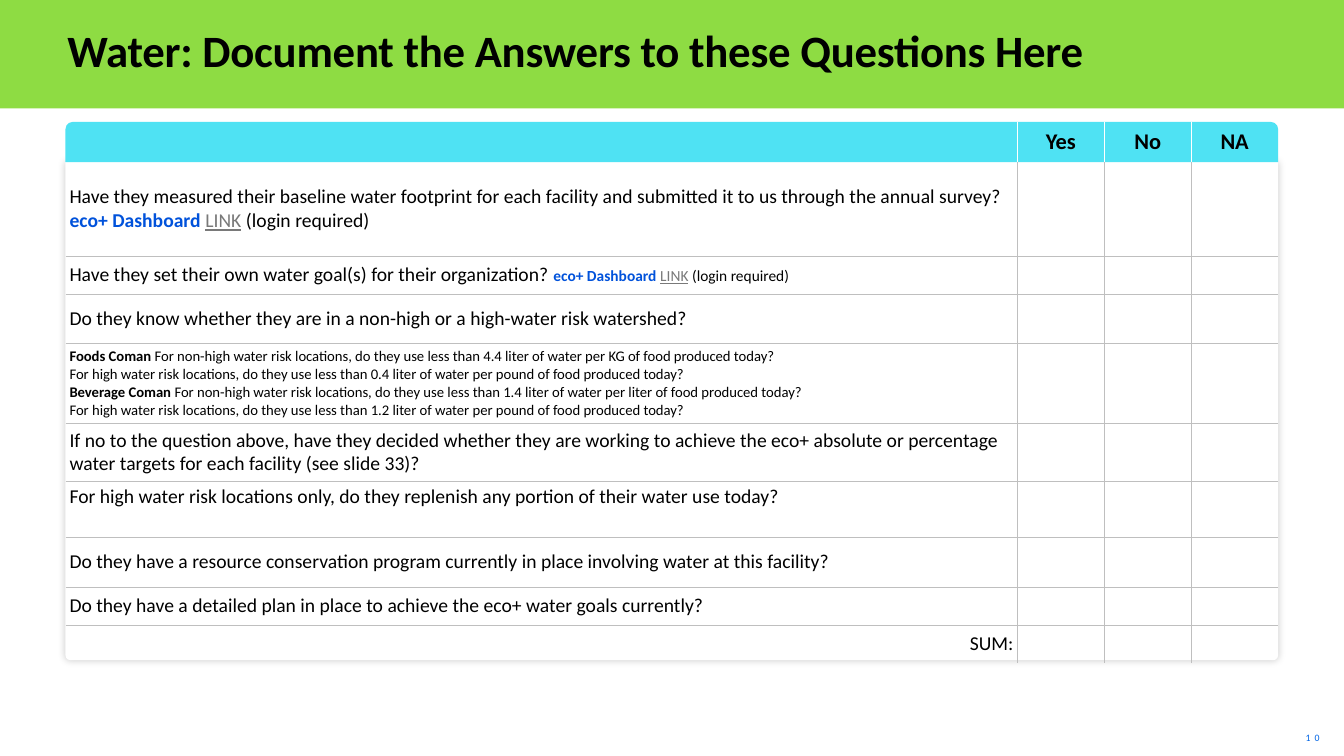
"""Build the water questionnaire slide with its yes, no and NA answer table."""
from dataclasses import dataclass

from lxml.etree import SubElement
from pptx import Presentation
from pptx.dml.color import RGBColor
from pptx.enum.shapes import MSO_SHAPE
from pptx.enum.text import MSO_ANCHOR, PP_ALIGN
from pptx.oxml.ns import qn
from pptx.util import Pt

FONT = "Calibri"
BLACK, WHITE, GREY, BLUE = "000000", "FFFFFF", "BFBFBF", "0052DB"
NO_STYLE = "{2D5ABB26-0587-4C30-8999-92F81FD0307C}"
LEFT, TOP, WIDTH, HEADER, CARD = 46.8, 87.1, 866.2, 28.8, 355.7
INSET = 2.88
ANSWERS = ("Yes", "No", "NA")
COLUMNS = (680, 62.07, 62.07, 62.07)


@dataclass
class Run:
    text: str
    size: float = 14
    color: str = BLACK
    bold: bool = False
    underline: bool = False
    spacing: int = 0


@dataclass
class Row:
    height: float
    lines: list[list[Run]]
    align: PP_ALIGN = PP_ALIGN.LEFT
    anchor: MSO_ANCHOR = MSO_ANCHOR.MIDDLE


@dataclass
class Panel:
    preset: MSO_SHAPE
    box: tuple[float, float, float, float]
    color: str
    corners: tuple[float, ...] = ()
    shadow: bool = False


def rgb(color: str) -> RGBColor:
    return RGBColor.from_string(color)


def dashboard(size: float) -> list[Run]:
    return [Run("eco+ Dashboard ", size, BLUE, bold=True),
            Run("LINK", size, "797979", underline=True),
            Run(" (login required)", size)]


def question(text: str) -> list[list[Run]]:
    return [[Run(text)]]


PANELS = [
    Panel(MSO_SHAPE.RECTANGLE, (0, 0, 960, 77.5), "8EDC43"),
    Panel(MSO_SHAPE.ROUND_2_SAME_RECTANGLE, (LEFT, TOP + HEADER, WIDTH, CARD),
          WHITE, (0, 0.01), True),
    Panel(MSO_SHAPE.ROUND_2_SAME_RECTANGLE, (LEFT, TOP, WIDTH, HEADER),
          "4FE2F3", (0.18, 0)),
]

ROWS = [
    Row(67.5, [[Run("Have they measured their baseline water footprint for each facility "
                    "and submitted it to us through the annual survey?")],
               dashboard(14)]),
    Row(27, [[Run("Have they set their own water goal(s) for their organization? "),
              *dashboard(11)]]),
    Row(35.5, question("Do they know whether they are in a non-high or a high-water risk "
                       "watershed?")),
    Row(57, [
        [Run("Foods Coman ", 10.5, bold=True),
         Run("For non-high water risk locations, do they use less than 4.4 liter of water "
             "per KG of food produced today?", 10.5)],
        [Run("For high water risk locations, do they use less than 0.4 liter of water "
             "per pound of food produced today?", 10.5)],
        [Run("Beverage Coman ", 10.5, bold=True),
         Run("For non-high water risk locations, do they use less than 1.4 liter of water "
             "per liter of food produced today?", 10.5)],
        [Run("For high water risk locations, do they use less than 1.2 liter of water "
             "per pound of food produced today?", 10.5)],
    ]),
    Row(41, question("If no to the question above, have they decided whether they are working "
                     "to achieve the eco+ absolute or percentage water targets for each "
                     "facility (see slide 33)?")),
    Row(40, question("For high water risk locations only, do they replenish any portion of "
                     "their water use today?"), anchor=MSO_ANCHOR.TOP),
    Row(36, question("Do they have a resource conservation program currently in place "
                     "involving water at this facility?")),
    Row(27, question("Do they have a detailed plan in place to achieve the eco+ water goals "
                     "currently?")),
    Row(27, question("SUM:"), PP_ALIGN.RIGHT),
]


def write(tf, lines: list[list[Run]], align: PP_ALIGN) -> None:
    for i, line in enumerate(lines):
        p = tf.add_paragraph() if i else tf.paragraphs[0]
        p.alignment = align
        for run in line:
            r = p.add_run()
            r.text = run.text
            formats = {"name": FONT, "size": Pt(run.size), "bold": run.bold,
                       "underline": run.underline}
            for name, value in formats.items():
                setattr(r.font, name, value)
            r.font.color.rgb = rgb(run.color)
            if run.spacing:
                r.font._element.set("spc", str(run.spacing))


def draw_panel(slide, panel: Panel) -> None:
    s = slide.shapes.add_shape(panel.preset, *map(Pt, panel.box))
    s.shadow.inherit = False
    s.fill.solid()
    s.fill.fore_color.rgb = rgb(panel.color)
    s.line.fill.background()
    for i, corner in enumerate(panel.corners):
        s.adjustments[i] = corner
    if panel.shadow:
        effects = s._element.spPr.find(qn("a:effectLst"))
        outer = SubElement(effects, qn("a:outerShdw"), blurRad=str(Pt(5)), dist="0",
                           algn="ctr", rotWithShape="0")
        color = SubElement(outer, qn("a:srgbClr"), val=BLACK)
        SubElement(color, qn("a:alpha"), val="20000")


def fill_cell(cell, row: Row, borders: dict[str, str]) -> None:
    tcPr = cell._tc.get_or_add_tcPr()
    for side in ("lnL", "lnR", "lnT", "lnB"):
        if side in borders:
            ln = SubElement(tcPr, qn(f"a:{side}"), w=str(Pt(0.5)))
            SubElement(SubElement(ln, qn("a:solidFill")), qn("a:srgbClr"), val=borders[side])
    cell.fill.background()
    cell.vertical_anchor = row.anchor
    for side in ("left", "right", "top", "bottom"):
        setattr(cell, f"margin_{side}", Pt(INSET))
    if row.lines:
        write(cell.text_frame, row.lines, row.align)
    else:
        SubElement(cell.text_frame.paragraphs[0]._p, qn("a:endParaRPr"), sz="1400")


def draw_table(slide) -> None:
    heights = [28.5] + [row.height for row in ROWS]
    frame = slide.shapes.add_table(len(heights), len(COLUMNS), Pt(LEFT), Pt(TOP),
                                   Pt(WIDTH), Pt(sum(heights)))
    table = frame.table
    table.first_row = table.horz_banding = False
    table._tbl.tblPr.find(qn("a:tableStyleId")).text = NO_STYLE
    for column, width in zip(table.columns, COLUMNS):
        column.width = Pt(width)
    last_row, last_column = len(heights) - 1, len(COLUMNS) - 1
    for i, height in enumerate(heights):
        table.rows[i].height = Pt(height)
        for j in range(len(COLUMNS)):
            if i == 0:
                lines = [[Run(ANSWERS[j - 1], 16, bold=True)]] if j else []
                row = Row(height, lines, PP_ALIGN.CENTER)
            else:
                row = ROWS[i - 1] if j == 0 else Row(height, [])
            vertical = GREY if i else WHITE
            drawn = {"lnL": (j > 0, vertical), "lnR": (j < last_column, vertical),
                     "lnT": (i > 1, GREY), "lnB": (0 < i < last_row, GREY)}
            borders = {side: color for side, (shown, color) in drawn.items() if shown}
            fill_cell(table.cell(i, j), row, borders)


def draw_title(slide) -> None:
    s = slide.shapes.title
    place = {"left": 48.2, "top": 13, "width": 864.7, "height": 49}
    for name, value in place.items():
        setattr(s, name, Pt(value))
    tf = s.text_frame
    for side in ("left", "right", "top", "bottom"):
        setattr(tf, f"margin_{side}", 0)
    tf.vertical_anchor = MSO_ANCHOR.MIDDLE
    title = Run("Water: Document the Answers to these Questions Here", 32, bold=True, spacing=-20)
    write(tf, [[title]], PP_ALIGN.LEFT)
    tf.paragraphs[0].line_spacing = 0.9


def draw_page_number(slide) -> None:
    s = slide.shapes.add_textbox(Pt(871.2), Pt(519.1), Pt(78.5), Pt(15.8))
    s.text_frame.word_wrap = True
    write(s.text_frame, [[Run("10", 7, "0065E5", spacing=300)]], PP_ALIGN.RIGHT)


def main() -> None:
    prs = Presentation()
    prs.slide_width, prs.slide_height = Pt(960), Pt(540)
    slide = prs.slides.add_slide(prs.slide_layouts[5])
    for panel in PANELS:
        draw_panel(slide, panel)
    title = slide.shapes.title._element
    title.getparent().append(title)
    draw_title(slide)
    draw_table(slide)
    draw_page_number(slide)
    prs.save("out.pptx")


if __name__ == "__main__":
    main()
